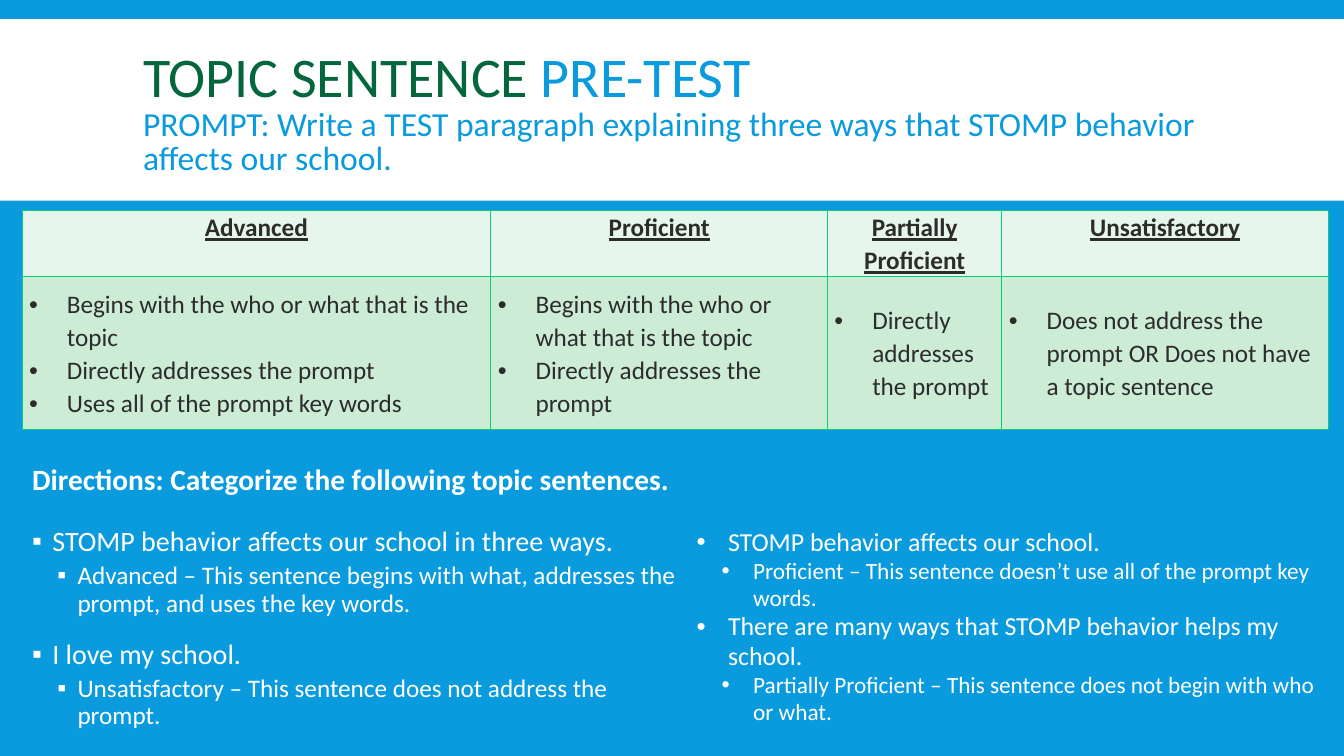
from lxml.etree import SubElement
from pptx import Presentation
from pptx.dml.color import RGBColor
from pptx.enum.shapes import MSO_SHAPE as Shape
from pptx.enum.text import MSO_ANCHOR as Anchor, MSO_AUTO_SIZE as AutoSize, PP_ALIGN as Align
from pptx.oxml.ns import qn
from pptx.util import Pt

BLUE, GREEN, WHITE, INK = "099BDD", "04663C", "FFFFFF", "2C2C2C"
HEADER_FILL, BODY_FILL, GRID = "E7F6EC", "CCECD6", "08CC78"

RUBRIC = [
    ("Advanced", 334.8, ["Begins with the who or what that is the topic",
                         "Directly addresses the prompt",
                         "Uses all of the prompt key words"]),
    ("Proficient", 240.5, ["Begins with the who or what that is the topic",
                           "Directly addresses the prompt"]),
    ("Partially Proficient", 124.5, ["Directly addresses the prompt"]),
    ("Unsatisfactory", 233.3, ["Does not address the prompt OR Does not have a topic sentence"]),
]
LEFT_ANSWERS = [
    (0, "STOMP behavior affects our school in three ways."),
    (1, "Advanced – This sentence begins with what, addresses the prompt, "
        "and uses the key words."),
    (0, "I love my school."),
    (1, "Unsatisfactory – This sentence does not address the prompt."),
]
RIGHT_ANSWERS = [
    (0, "STOMP behavior affects our school."),
    (1, "Proficient – This sentence doesn’t use all of the prompt key words."),
    (0, "There are many ways that STOMP behavior helps my school."),
    (1, "Partially Proficient – This sentence does not begin with who or what."),
]


def rgb(value):
    return RGBColor.from_string(value)


class RubricSlide:
    """Holds the style and the current slide, and adds each kind of element."""

    font_name = "Calibri"

    def __init__(self, presentation):
        self.slide = presentation.slides.add_slide(presentation.slide_layouts[4])
        self.slide.background.fill.solid()
        self.slide.background.fill.fore_color.rgb = rgb(BLUE)

    def band(self, left, top, width, height, color):
        shape = self.slide.shapes.add_shape(
            Shape.RECTANGLE, Pt(left), Pt(top), Pt(width), Pt(height))
        shape.shadow.inherit = False
        shape.fill.solid()
        shape.fill.fore_color.rgb = rgb(color)
        shape.line.fill.background()
        self.slide.shapes._spTree.insert(2, shape._element)

    def placeholder(self, index, left, top, width, height, anchor):
        shape = next(item for item in self.slide.placeholders
                     if item.placeholder_format.idx == index)
        shape.left, shape.top = Pt(left), Pt(top)
        shape.width, shape.height = Pt(width), Pt(height)
        frame = shape.text_frame
        frame.word_wrap = True
        frame.auto_size = AutoSize.NONE
        frame.vertical_anchor = anchor
        return frame

    def remove_empty(self):
        for shape in list(self.slide.placeholders):
            if not shape.text_frame.text:
                shape._element.getparent().remove(shape._element)

    def style(self, paragraph, size, color, spacing, before=0, after=0,
              bold=False, align=Align.LEFT):
        paragraph.alignment = align
        paragraph.line_spacing = spacing
        paragraph.space_before, paragraph.space_after = Pt(before), Pt(after)
        font = paragraph.font
        font.name, font.size, font.bold = self.font_name, Pt(size), bold
        font.color.rgb = rgb(color)

    def bullet(self, paragraph, symbol, margin, hanging):
        properties = paragraph._p.get_or_add_pPr()
        properties.set("marL", str(Pt(margin)))
        properties.set("indent", str(-Pt(hanging)))
        font = SubElement(properties, qn("a:buFont"), typeface="Arial")
        character = SubElement(properties, qn("a:buChar"), char=symbol)
        defaults = properties.find(qn("a:defRPr"))
        defaults.addprevious(font)
        defaults.addprevious(character)

    def paragraphs(self, frame, texts):
        for number, text in enumerate(texts):
            paragraph = frame.add_paragraph() if number else frame.paragraphs[0]
            paragraph.text = text
            yield paragraph

    def title(self, box, lines):
        paragraph = self.placeholder(0, *box, Anchor.MIDDLE).paragraphs[0]
        self.style(paragraph, 40, BLUE, 0.85)
        for number, line in enumerate(lines):
            if number:
                paragraph.add_line_break()
            for text, size, color in line:
                run = paragraph.add_run()
                run.text = text
                run.font.size = Pt(size)
                run.font.color.rgb = rgb(color)

    def directions(self, box, text):
        frame = self.placeholder(1, *box, Anchor.MIDDLE)
        for paragraph in self.paragraphs(frame, [text]):
            self.style(paragraph, 21, WHITE, 0.9, 12, 2, bold=True)

    def answers(self, index, box, entries, symbol, hanging, sizes, spacing, gaps):
        frame = self.placeholder(index, *box, Anchor.TOP)
        texts = [text for _, text in entries]
        for (level, _), paragraph in zip(entries, self.paragraphs(frame, texts)):
            paragraph.level = level
            self.style(paragraph, sizes[level], WHITE, spacing, *gaps[level])
            self.bullet(paragraph, symbol, hanging + 18 * level, hanging)

    def cell(self, cell, texts, fill, anchor):
        cell.margin_left = cell.margin_right = Pt(5)
        cell.margin_top = cell.margin_bottom = 0
        cell.vertical_anchor = anchor
        cell.fill.solid()
        cell.fill.fore_color.rgb = rgb(fill)
        properties = cell._tc.get_or_add_tcPr()
        for position, side in enumerate(("a:lnL", "a:lnR", "a:lnT", "a:lnB")):
            line = SubElement(properties, qn(side), w=str(Pt(1)))
            color = SubElement(line, qn("a:solidFill"))
            SubElement(color, qn("a:srgbClr"), val=GRID)
            properties.insert(position, line)
        return self.paragraphs(cell.text_frame, texts)

    def rubric(self, left, top, heights, columns):
        width = sum(column[1] for column in columns)
        table = self.slide.shapes.add_table(
            2, len(columns), Pt(left), Pt(top), Pt(width), Pt(sum(heights))).table
        table.horz_banding = False
        for row, height in zip(table.rows, heights):
            row.height = Pt(height)
        for number, (heading, column_width, criteria) in enumerate(columns):
            table.columns[number].width = Pt(column_width)
            header, body = table.cell(0, number), table.cell(1, number)
            for paragraph in self.cell(header, [heading], HEADER_FILL, Anchor.TOP):
                self.style(paragraph, 18, INK, 1.07, bold=True, align=Align.CENTER)
                paragraph.font.underline = True
            for paragraph in self.cell(body, criteria, BODY_FILL, Anchor.MIDDLE):
                self.style(paragraph, 18, INK, 1.07)
                self.bullet(paragraph, "•", 27, 27)


def main():
    presentation = Presentation()
    presentation.slide_width, presentation.slide_height = Pt(960), Pt(540)
    page = RubricSlide(presentation)
    page.band(0, 13.7, 960, 129.6, WHITE)
    page.title((95, 22.3, 770.4, 118.8), [
        [("TOPIC SENTENCE ", 40, GREEN), ("PRE-TEST", 40, BLUE)],
        [("PROMPT: Write a TEST paragraph explaining three ways that "
          "STOMP behavior affects our school.", 24, BLUE)],
    ])
    page.directions((15.8, 314.6, 793.4, 58.3),
                    "Directions: Categorize the following topic sentences.")
    page.answers(2, (15.8, 373, 474.5, 157.7), LEFT_ANSWERS, "▪", 14.4,
                 (20, 18), 0.9, ((12, 2), (2, 4)))
    page.answers(4, (490.3, 373, 458, 157.7), RIGHT_ANSWERS, "•", 22.5,
                 (18.5, 16.6), 0.97, ((0, 0), (0, 0)))
    page.rubric(15.8, 150.5, (38.9, 109.4), RUBRIC)
    page.remove_empty()
    presentation.save("out.pptx")


if __name__ == "__main__":
    main()
